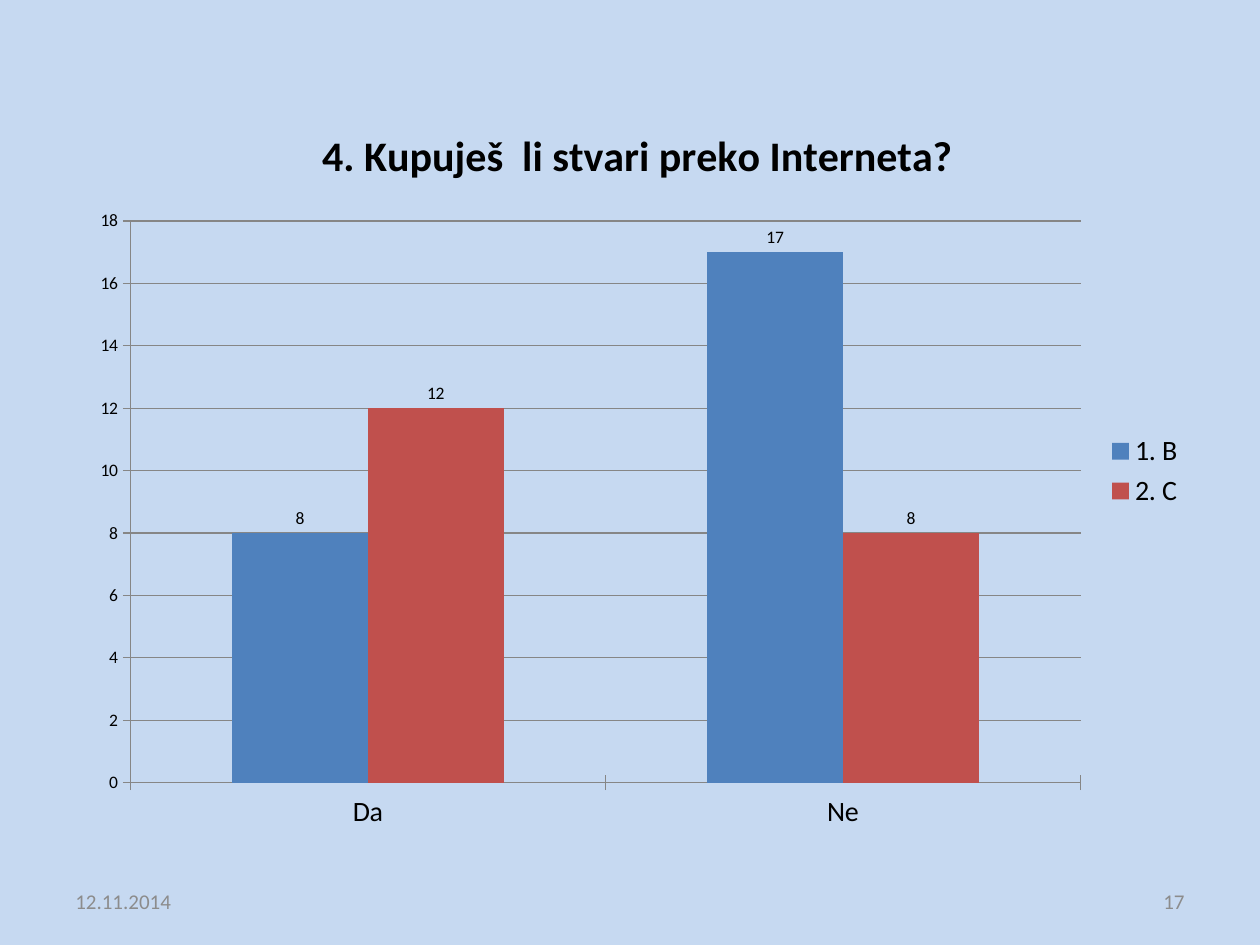
from pptx import Presentation
from pptx.chart.data import CategoryChartData
from pptx.dml.color import RGBColor
from pptx.enum.chart import XL_CHART_TYPE, XL_LABEL_POSITION, XL_LEGEND_POSITION, XL_TICK_MARK
from pptx.enum.text import MSO_ANCHOR, PP_ALIGN
from pptx.util import Inches, Pt

FONT = "Calibri"
BLACK = "000000"
GRAY = "8C8C8C"
AXIS_GRAY = "868686"
BACKGROUND = "C6D9F1"
CATEGORIES = ["Da", "Ne"]
ANSWERS = [("1. B", (8, 17), "4F81BD"), ("2. C", (12, 8), "C0504D")]


def color(value):
    """Turn a hex string into a colour."""
    return RGBColor.from_string(value)


def format_font(font, size, fill=BLACK, bold=False):
    """Set the face, size, colour and weight of a font."""
    font.name = FONT
    font.size = Pt(size)
    font.bold = bold
    font.color.rgb = color(fill)


def write_text(text_frame, text, align=None, **font_format):
    """Write one formatted paragraph into a text frame."""
    paragraph = text_frame.paragraphs[0]
    paragraph.alignment = align
    run = paragraph.add_run()
    run.text = text
    format_font(run.font, **font_format)


def add_footer(slide, text, left, align):
    """Add a small gray text at the foot of the slide."""
    shape = slide.shapes.add_textbox(Inches(left), Inches(6.95), Inches(2.33), Inches(0.4))
    shape.text_frame.word_wrap = True
    shape.text_frame.vertical_anchor = MSO_ANCHOR.MIDDLE
    write_text(shape.text_frame, text, align, size=12, fill=GRAY)


def format_axis(axis, size):
    """Style the line, ticks and labels of an axis."""
    axis.major_tick_mark = XL_TICK_MARK.CROSS
    axis.format.line.color.rgb = color(AXIS_GRAY)
    format_font(axis.tick_labels.font, size)


def format_series(series, fill):
    """Fill the columns of a series and show their values."""
    series.format.fill.solid()
    series.format.fill.fore_color.rgb = color(fill)
    labels = series.data_labels
    labels.show_value = True
    labels.position = XL_LABEL_POSITION.OUTSIDE_END
    format_font(labels.font, 10)


def add_answer_chart(slide, title):
    """Add the column chart of the answers."""
    data = CategoryChartData()
    data.categories = CATEGORIES
    for name, values, _ in ANSWERS:
        data.add_series(name, values)
    chart = slide.shapes.add_chart(
        XL_CHART_TYPE.COLUMN_CLUSTERED,
        Inches(0.62), Inches(0.78), Inches(8.88), Inches(5.92), data,
    ).chart
    format_font(chart.font, 10)
    write_text(chart.chart_title.text_frame, title, size=24, bold=True)
    chart.chart_title.include_in_layout = False

    chart.has_legend = True
    chart.legend.position = XL_LEGEND_POSITION.RIGHT
    chart.legend.include_in_layout = False
    format_font(chart.legend.font, 16)

    format_axis(chart.category_axis, 16)
    format_axis(chart.value_axis, 10)
    chart.value_axis.has_major_gridlines = True
    chart.value_axis.major_gridlines.format.line.color.rgb = color(AXIS_GRAY)

    plot = chart.plots[0]
    plot.vary_by_categories = False
    plot.gap_width = 150
    plot.overlap = 0
    for series, (_, _, fill) in zip(plot.series, ANSWERS):
        format_series(series, fill)


def main():
    """Build and save the slide."""
    presentation = Presentation()
    presentation.slide_width = Inches(10)
    presentation.slide_height = Inches(7.5)
    slide = presentation.slides.add_slide(presentation.slide_layouts[6])
    slide.background.fill.solid()
    slide.background.fill.fore_color.rgb = color(BACKGROUND)
    add_answer_chart(slide, "4. Kupuješ  li stvari preko Interneta?")
    add_footer(slide, "12.11.2014", 0.5, PP_ALIGN.LEFT)
    add_footer(slide, "17", 7.17, PP_ALIGN.RIGHT)
    presentation.save("out.pptx")


if __name__ == "__main__":
    main()
